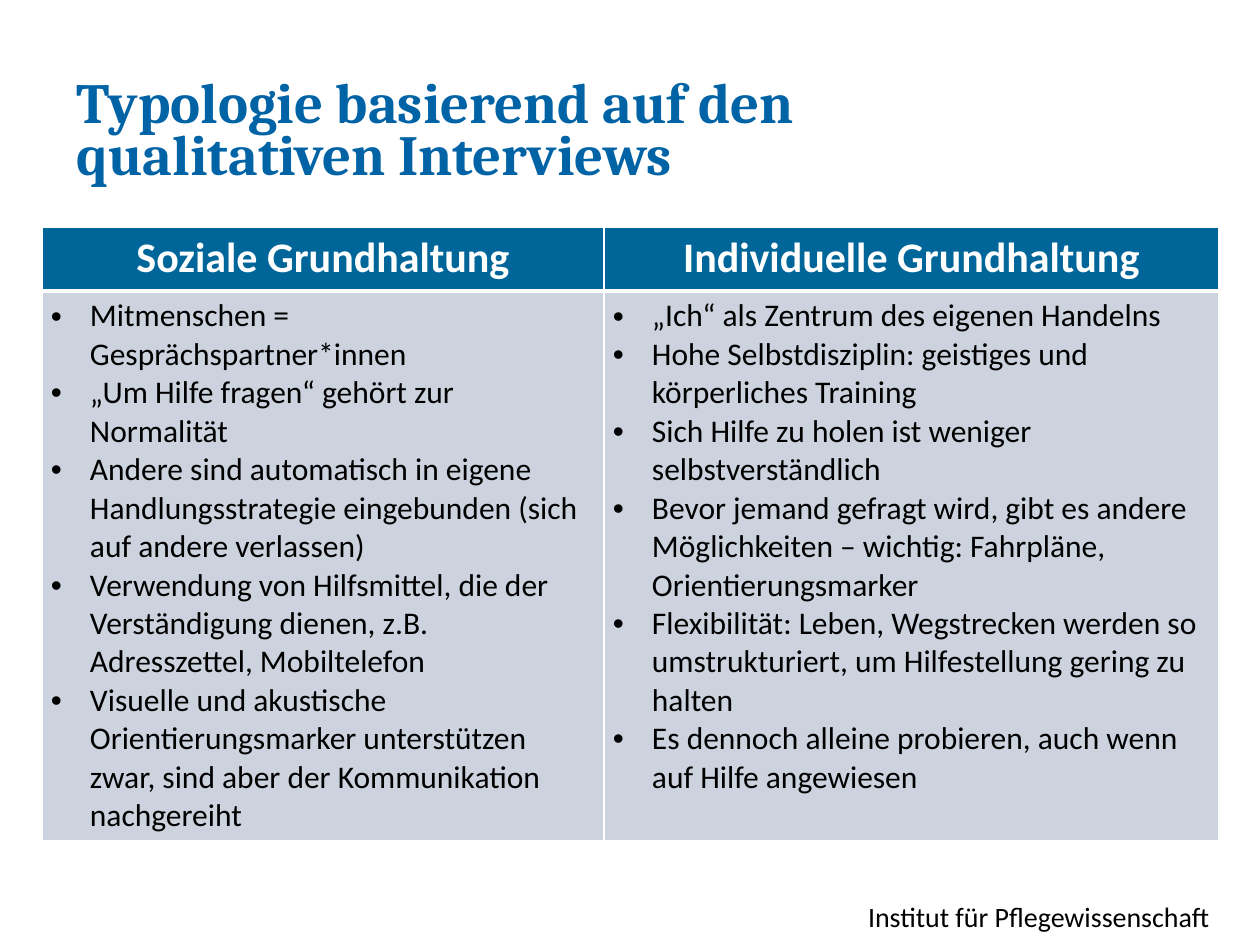
"""Build a slide comparing two basic attitudes in a two-column table."""
import lxml.etree
import pptx
import pptx.dml.color
import pptx.enum.text
import pptx.oxml.ns
import pptx.util

TITLE = "Typologie basierend auf den qualitativen Interviews"
FOOT = "Institut für Pflegewissenschaft"
COLS = [
    ("Soziale Grundhaltung", 562, [
        "Mitmenschen = Gesprächspartner*innen",
        "„Um Hilfe fragen“ gehört zur Normalität",
        "Andere sind automatisch in eigene Handlungsstrategie eingebunden (sich auf andere verlassen)",
        "Verwendung von Hilfsmittel, die der Verständigung dienen, z.B. Adresszettel, Mobiltelefon",
        "Visuelle und akustische Orientierungsmarker unterstützen zwar, sind aber der Kommunikation nachgereiht",
    ]),
    ("Individuelle Grundhaltung", 615, [
        "„Ich“ als Zentrum des eigenen Handelns",
        "Hohe Selbstdisziplin: geistiges und körperliches Training",
        "Sich Hilfe zu holen ist weniger selbstverständlich",
        "Bevor jemand gefragt wird, gibt es andere Möglichkeiten – wichtig: Fahrpläne, Orientierungsmarker",
        "Flexibilität: Leben, Wegstrecken werden so umstrukturiert, um Hilfestellung gering zu halten",
        "Es dennoch alleine probieren, auch wenn auf Hilfe angewiesen",
    ]),
]
ROWS = [64, 550]
INK = {"title": "0063A6", "head": "006699", "body": "CCD3DE", "line": "FFFFFF", "text": "000000"}
ALIGN = pptx.enum.text.PP_ALIGN
Pt = pptx.util.Pt


def px(n):
    return pptx.util.Emu(round(n * 914400 / 126))


def rgb(name):
    return pptx.dml.color.RGBColor.from_string(INK[name])


def node(up, tag, **attrs):
    return lxml.etree.SubElement(up, pptx.oxml.ns.qn(tag), **attrs)


def write(frame, lines, size, font="Calibri", ink="text", bold=False,
          align=ALIGN.LEFT, space=None, bullet=False):
    for i, line in enumerate(lines):
        para = frame.add_paragraph() if i else frame.paragraphs[0]
        para.alignment = align
        if space:
            para.line_spacing = Pt(space)
        if bullet:
            props = para._p.get_or_add_pPr()
            props.set("marL", str(px(39)))
            props.set("indent", str(-px(39)))
            node(props, "a:buFont", typeface="Arial")
            node(props, "a:buChar", char="•")
        run = para.add_run()
        run.text = line
        run.font.size, run.font.name, run.font.bold = Pt(size), font, bold
        run.font.color.rgb = rgb(ink)


def dress(cell, ink, **widths):
    props = cell._tc.get_or_add_tcPr()
    for side in "LRTB":
        edge = node(props, "a:ln" + side, w=str(Pt(widths.get(side, 1))))
        node(node(edge, "a:solidFill"), "a:srgbClr", val=INK["line"])
    cell.fill.solid()
    cell.fill.fore_color.rgb = rgb(ink)
    cell.margin_left = cell.margin_right = px(9)
    cell.margin_top = cell.margin_bottom = px(6)


def main():
    deck = pptx.Presentation()
    deck.slide_width, deck.slide_height = px(1260), px(945)
    slide = deck.slides.add_slide(deck.slide_layouts[5])

    title = slide.shapes.title
    title.left, title.top, title.width, title.height = map(px, (64, 76, 753, 59))
    frame = title.text_frame
    frame.word_wrap = True
    frame.auto_size = pptx.enum.text.MSO_AUTO_SIZE.NONE
    frame.vertical_anchor = pptx.enum.text.MSO_ANCHOR.TOP
    write(frame, [TITLE], 32.4, font="Cambria", ink="title", bold=True, space=29.8)

    wide = sum(col[1] for col in COLS)
    table = slide.shapes.add_table(
        len(ROWS), len(COLS), px(42), px(227), px(wide), px(sum(ROWS))).table
    table.horz_banding = False
    for row, high in zip(table.rows, ROWS):
        row.height = px(high)
    for i, (head, width, items) in enumerate(COLS):
        table.columns[i].width = px(width)
        top, low = table.cell(0, i), table.cell(1, i)
        dress(top, "head", B=3)
        dress(low, "body", T=3)
        write(top.text_frame, [head], 24, ink="line", bold=True, align=ALIGN.CENTER)
        write(low.text_frame, items, 18, bullet=True)

    frame = slide.shapes.add_textbox(px(868), px(900), px(357), px(30)).text_frame
    frame.margin_left = frame.margin_top = frame.margin_right = frame.margin_bottom = 0
    frame.word_wrap = True
    write(frame, [FOOT], 16)
    deck.save("out.pptx")


if __name__ == "__main__":
    main()
